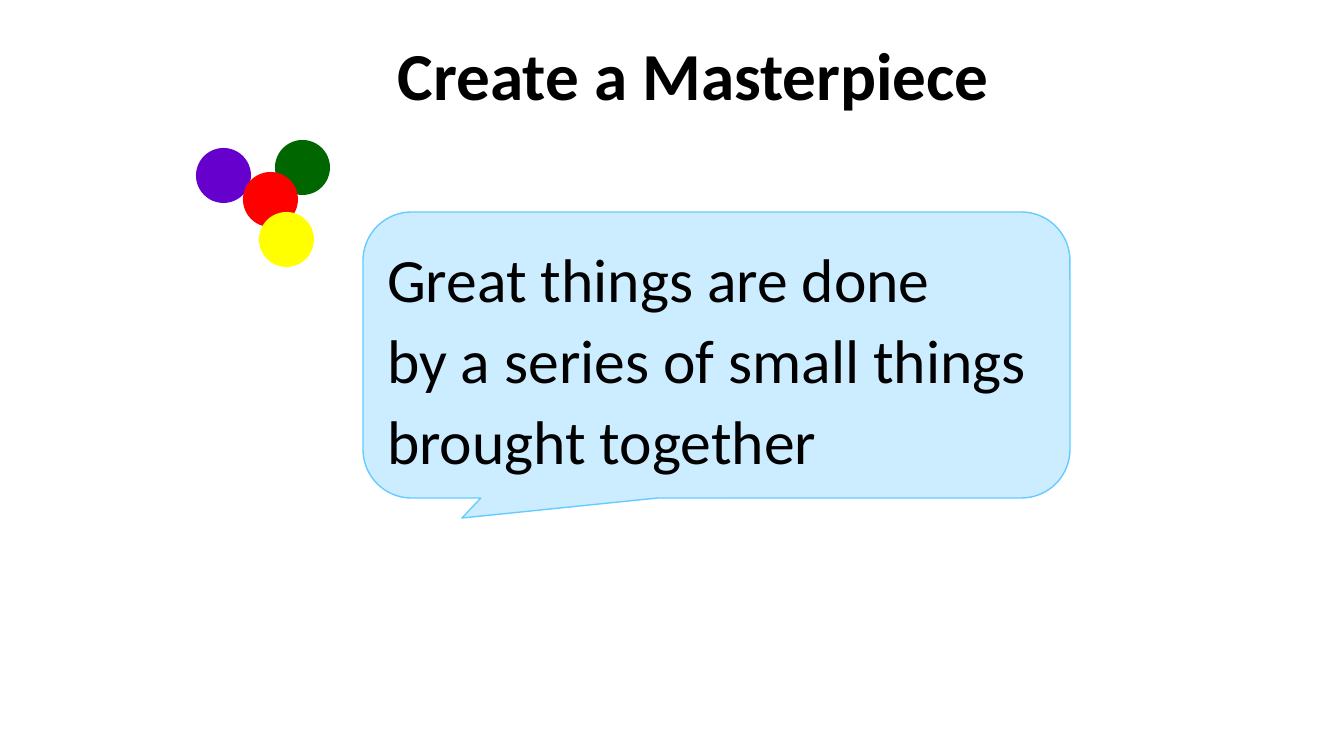
from dataclasses import dataclass

from pptx import Presentation
from pptx.dml.color import RGBColor
from pptx.enum.shapes import MSO_SHAPE
from pptx.enum.text import MSO_ANCHOR, PP_ALIGN
from pptx.util import Pt

CIRCLE = MSO_SHAPE.OVAL
CALLOUT = MSO_SHAPE.ROUNDED_RECTANGULAR_CALLOUT
MIDDLE = MSO_ANCHOR.MIDDLE
LEFT, CENTER = PP_ALIGN.LEFT, PP_ALIGN.CENTER

EMU_PER_PX = 914400 / 100.8
PAGE_WIDTH, PAGE_HEIGHT = 1344, 756


@dataclass(frozen=True)
class Theme:
    font: str = "Calibri"
    ink: str = "000000"
    bubble_fill: str = "CCECFF"
    bubble_line: str = "66CCFF"
    purple: str = "6600CC"
    green: str = "006600"
    red: str = "FF0000"
    yellow: str = "FFFF00"
    title_size: int = 48
    quote_size: int = 44


def px(*lengths):
    return [round(length * EMU_PER_PX) for length in lengths]


class Page:
    def __init__(self, deck, theme):
        self.theme = theme
        self.shapes = deck.slides.add_slide(deck.slide_layouts[6]).shapes

    def set_text(self, frame, text, size, align, bold=False, spacing=1.0):
        frame.text = text
        for para in frame.paragraphs:
            para.alignment = align
            para.line_spacing = spacing
            for span in para.runs:
                span.font.name = self.theme.font
                span.font.size = Pt(size)
                span.font.bold = bold
                span.font.color.rgb = RGBColor.from_string(self.theme.ink)

    def shape(self, kind, left, top, width, height, fill, line=None):
        shape = self.shapes.add_shape(kind, *px(left, top, width, height))
        shape.shadow.inherit = False
        shape.fill.solid()
        shape.fill.fore_color.rgb = RGBColor.from_string(fill)
        if line:
            shape.line.color.rgb = RGBColor.from_string(line)
            shape.line.width = Pt(1)
        else:
            shape.line.fill.background()
        return shape

    def speech_bubble(self, left, top, width, height, text):
        bubble = self.shape(CALLOUT, left, top, width, height,
                            self.theme.bubble_fill, self.theme.bubble_line)
        # Tail tip across, tail tip down, corner radius
        for index, value in enumerate((-0.36, 0.57, 0.17)):
            bubble.adjustments[index] = value
        frame = bubble.text_frame
        frame.word_wrap = False
        frame.vertical_anchor = MIDDLE
        self.set_text(frame, text, self.theme.quote_size, LEFT, spacing=1.1)

    def dot(self, left, top, fill, diameter=55):
        self.shape(CIRCLE, left, top, diameter, diameter, fill)

    def title(self, left, top, width, height, text):
        box = self.shapes.add_textbox(*px(left, top, width, height))
        box.text_frame.word_wrap = True
        self.set_text(box.text_frame, text, self.theme.title_size, CENTER, bold=True)


def main():
    theme = Theme()
    deck = Presentation()
    deck.slide_width, deck.slide_height = px(PAGE_WIDTH, PAGE_HEIGHT)
    page = Page(deck, theme)

    # Quotation
    page.speech_bubble(363, 212, 707, 286,
                       "Great things are done\n"
                       "by a series of small things\n"
                       "brought together")

    # Paint dots, back to front
    for left, top, color in ((196, 148, theme.purple), (275, 140, theme.green),
                             (243, 172, theme.red), (259, 212, theme.yellow)):
        page.dot(left, top, color)

    # Title
    page.title(243, 28, 901, 92, "Create a Masterpiece")

    deck.save("out.pptx")


if __name__ == "__main__":
    main()
